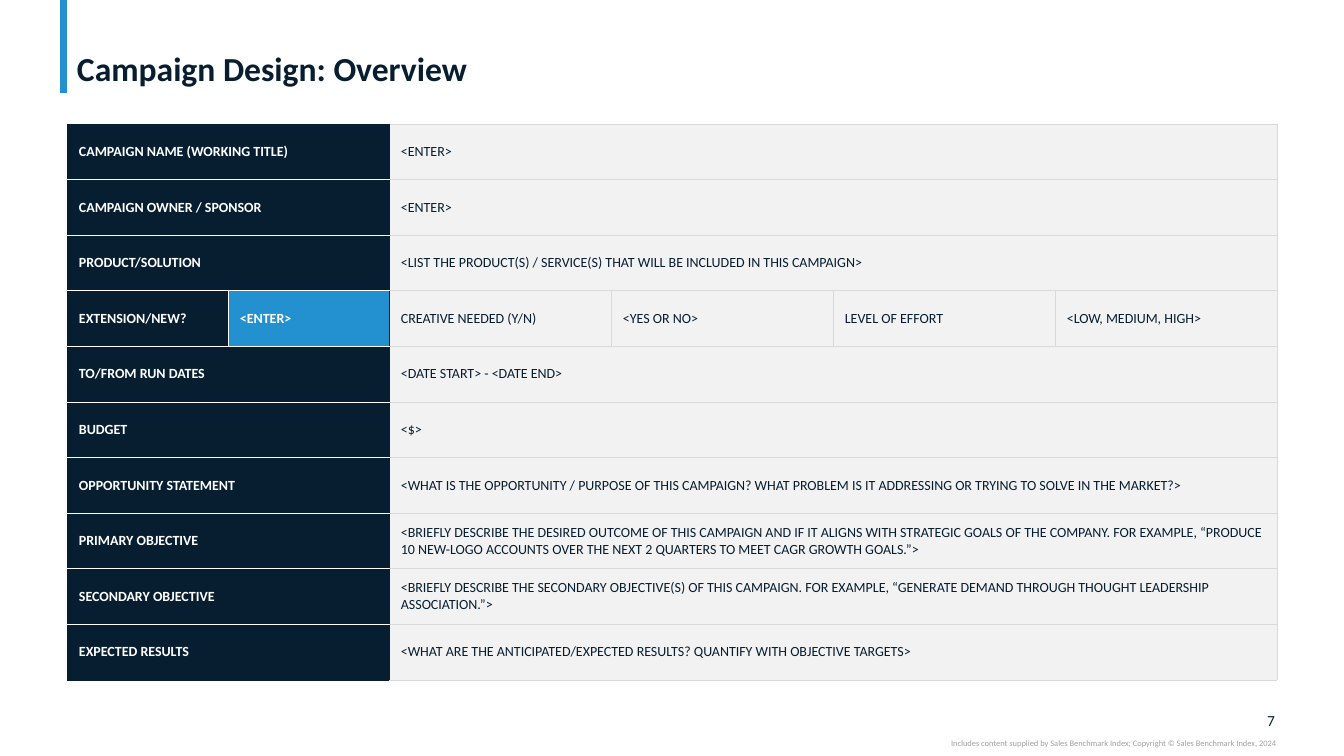
"""Build the campaign design overview slide."""
from lxml.etree import SubElement
from pptx import Presentation
from pptx.dml.color import RGBColor
from pptx.enum.shapes import MSO_CONNECTOR
from pptx.enum.text import MSO_ANCHOR, PP_ALIGN
from pptx.oxml import parse_xml
from pptx.oxml.ns import nsdecls, qn
from pptx.util import Pt

COLORS = {"navy": "071E31", "blue": "2391CF", "white": "FFFFFF",
          "panel": "F2F2F2", "rule": "D9D9D9", "gray": "A0A0A0"}
FONT = "Calibri"
TITLE = "Campaign Design: Overview"
PAGE = "7"
FOOTER = ("Includes content supplied by Sales Benchmark Index; "
          "Copyright © Sales Benchmark Index, 2024")
ROWS = [
    ("CAMPAIGN NAME (WORKING TITLE)", "<ENTER>"),
    ("CAMPAIGN OWNER / SPONSOR", "<ENTER>"),
    ("PRODUCT/SOLUTION",
     "<LIST THE PRODUCT(S) / SERVICE(S) THAT WILL BE INCLUDED IN THIS CAMPAIGN>"),
    ("EXTENSION/NEW?", "<ENTER>", "CREATIVE NEEDED (Y/N)", "<YES OR NO>",
     "LEVEL OF EFFORT", "<LOW, MEDIUM, HIGH>"),
    ("TO/FROM RUN DATES", "<DATE START> - <DATE END>"),
    ("BUDGET", "<$>"),
    ("OPPORTUNITY STATEMENT",
     "<WHAT IS THE OPPORTUNITY / PURPOSE OF THIS CAMPAIGN? WHAT PROBLEM IS IT "
     "ADDRESSING OR TRYING TO SOLVE IN THE MARKET?>"),
    ("PRIMARY OBJECTIVE",
     "<BRIEFLY DESCRIBE THE DESIRED OUTCOME OF THIS CAMPAIGN AND IF IT ALIGNS WITH "
     "STRATEGIC GOALS OF THE COMPANY. FOR EXAMPLE, “PRODUCE 10 NEW-LOGO ACCOUNTS "
     "OVER THE NEXT 2 QUARTERS TO MEET CAGR GROWTH GOALS.”>"),
    ("SECONDARY OBJECTIVE",
     "<BRIEFLY DESCRIBE THE SECONDARY OBJECTIVE(S) OF THIS CAMPAIGN. FOR EXAMPLE, "
     "“GENERATE DEMAND THROUGH THOUGHT LEADERSHIP ASSOCIATION.”>"),
    ("EXPECTED RESULTS",
     "<WHAT ARE THE ANTICIPATED/EXPECTED RESULTS? QUANTIFY WITH OBJECTIVE TARGETS>"),
]
COL_WIDTHS = [161, 161, 222, 222, 222, 222]
LABEL_COLS = 2
TABLE_LEFT, TABLE_TOP, TABLE_HEIGHT = 67, 124, 556
SCALE = 914400 / 100.8


def px(n):
    return round(n * SCALE)


def rgb(name):
    return RGBColor.from_string(COLORS[name])


def write(tf, text, size=10, color="navy", bold=False, align=PP_ALIGN.LEFT,
          spacing=1.0, anchor=None):
    tf.word_wrap = True
    if anchor is not None:
        tf.vertical_anchor = anchor
    p = tf.paragraphs[0]
    p.alignment = align
    p.line_spacing = spacing
    r = p.add_run()
    r.text = text
    r.font.name = FONT
    r.font.size = Pt(size)
    r.font.bold = bold
    r.font.color.rgb = rgb(color)


def add_text(s, box, text, inset=0, **fmt):
    tf = s.shapes.add_textbox(*map(px, box)).text_frame
    tf.margin_left = tf.margin_right = px(inset)
    tf.margin_top = tf.margin_bottom = 0
    write(tf, text, **fmt)


def set_borders(cell, colors):
    tcPr = cell._tc.get_or_add_tcPr()
    for i, (side, color) in enumerate(zip("LRTB", colors)):
        ln = parse_xml(f'<a:ln{side} {nsdecls("a")} w="{Pt(0.5)}"><a:solidFill>'
                       f'<a:srgbClr val="{COLORS[color]}"/></a:solidFill></a:ln{side}>')
        tcPr.insert(i, ln)


def border_colors(row, col, split):
    if col >= LABEL_COLS:
        left = "navy" if col == LABEL_COLS else "rule"
        return left, "rule", "rule", "rule"
    left = "white" if split and col == 1 else "navy"
    right = "white" if split and col == 0 else "navy"
    top = "navy" if row == 0 else "white"
    bottom = "navy" if row == len(ROWS) - 1 else "white"
    return left, right, top, bottom


def add_campaign_table(s):
    n_cols = len(COL_WIDTHS)
    box = (TABLE_LEFT, TABLE_TOP, sum(COL_WIDTHS), TABLE_HEIGHT)
    table = s.shapes.add_table(len(ROWS), n_cols, *map(px, box)).table
    table.first_row = table.horz_banding = False
    for column, width in zip(table.columns, COL_WIDTHS):
        column.width = px(width)
    for i, texts in enumerate(ROWS):
        table.rows[i].height = px(TABLE_HEIGHT / len(ROWS))
        split = len(texts) == n_cols
        starts = range(n_cols) if split else (0, LABEL_COLS)
        for j in range(n_cols):
            cell = table.cell(i, j)
            label = j < LABEL_COLS
            cell.fill.solid()
            cell.fill.fore_color.rgb = rgb(
                "blue" if split and j == 1 else "navy" if label else "panel")
            set_borders(cell, border_colors(i, j, split))
            cell.margin_left = cell.margin_right = px(12)
            cell.margin_top = cell.margin_bottom = px(8)
            cell.vertical_anchor = MSO_ANCHOR.MIDDLE
        if not split:
            table.cell(i, 0).merge(table.cell(i, LABEL_COLS - 1))
            table.cell(i, LABEL_COLS).merge(table.cell(i, n_cols - 1))
        for j, text in zip(starts, texts):
            label = j < LABEL_COLS
            write(table.cell(i, j).text_frame, text, bold=label,
                  color="white" if label else "navy")


def main():
    prs = Presentation()
    prs.slide_width, prs.slide_height = px(1344), px(756)
    s = prs.slides.add_slide(prs.slide_layouts[6])
    bar = s.shapes.add_connector(MSO_CONNECTOR.STRAIGHT, px(64), 0, px(64), px(93))
    bar.line.color.rgb = rgb("blue")
    bar.line.width = Pt(5)
    SubElement(bar._element.spPr, qn("a:effectLst"))
    add_text(s, (1242, 711, 33, 19), PAGE, size=11, align=PP_ALIGN.RIGHT,
             anchor=MSO_ANCHOR.MIDDLE)
    add_text(s, (756, 738, 520, 10), FOOTER, size=6, color="gray",
             align=PP_ALIGN.RIGHT)
    add_text(s, (67, 4, 1209, 85), TITLE, inset=10, size=24, bold=True,
             spacing=0.9, anchor=MSO_ANCHOR.BOTTOM)
    add_campaign_table(s)
    prs.save("out.pptx")


if __name__ == "__main__":
    main()
